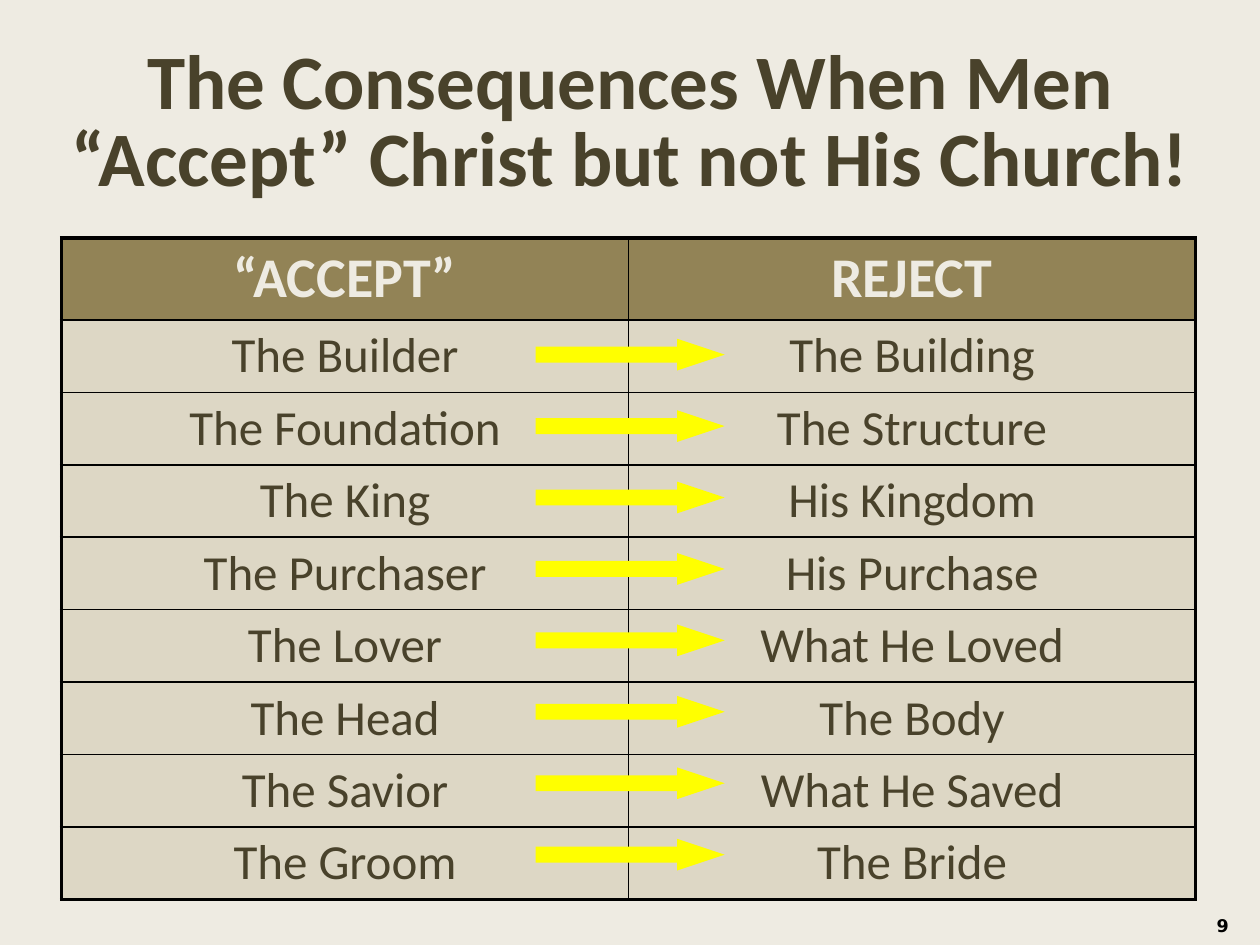
from dataclasses import dataclass

from lxml.etree import SubElement
from pptx import Presentation
from pptx.dml.color import RGBColor
from pptx.enum.shapes import MSO_SHAPE
from pptx.enum.text import MSO_ANCHOR, PP_ALIGN
from pptx.oxml.ns import qn
from pptx.util import Cm, Pt


@dataclass(frozen=True)
class Theme:
    background: str = "EEEBE2"
    ink: str = "49422B"
    header: str = "928356"
    body: str = "DDD7C5"
    arrow: str = "FFFF00"
    black: str = "000000"
    font: str = "Calibri"
    number_font: str = "DejaVu Sans"
    title_size: int = 44
    header_size: int = 32
    body_size: int = 28
    number_size: int = 10
    outer_line: float = 2.25
    inner_line: float = 1


def rgb(color):
    return RGBColor.from_string(color)


class SlideBuilder:
    def __init__(self, s, theme):
        self.s = s
        self.theme = theme

    def background(self):
        fill = self.s.background.fill
        fill.solid()
        fill.fore_color.rgb = rgb(self.theme.background)

    def run(self, p, text, size, color, bold=False, font=None):
        r = p.add_run()
        r.text = text
        r.font.name = font or self.theme.font
        r.font.size = Pt(size)
        r.font.bold = bold
        r.font.color.rgb = rgb(color)

    def text(self, box, text, size, color, align, font=None):
        tf = self.s.shapes.add_textbox(*map(Cm, box)).text_frame
        tf.word_wrap = True
        p = tf.paragraphs[0]
        p.alignment = align
        self.run(p, text, size, color, True, font)
        return tf

    def title(self, box, text):
        t = self.theme
        tf = self.text(box, text, t.title_size, t.ink, PP_ALIGN.CENTER)
        tf.paragraphs[0].line_spacing = Pt(t.title_size)

    def number(self, box, text):
        t = self.theme
        tf = self.text(box, text, t.number_size, t.black, PP_ALIGN.RIGHT,
                       t.number_font)
        tf.vertical_anchor = MSO_ANCHOR.BOTTOM
        tf.margin_left = tf.margin_right = tf.margin_top = Cm(0.3)
        tf.margin_bottom = Cm(0.25)

    def fill_cell(self, cell, color, outer_sides):
        # Borders come before the fill in the cell properties
        tc_pr = cell._tc.get_or_add_tcPr()
        for side in "LRTB":
            width = (self.theme.outer_line if side in outer_sides
                     else self.theme.inner_line)
            ln = SubElement(tc_pr, qn(f"a:ln{side}"), w=str(Pt(width)))
            solid = SubElement(ln, qn("a:solidFill"))
            SubElement(solid, qn("a:srgbClr"), val=self.theme.black)
        cell.fill.solid()
        cell.fill.fore_color.rgb = rgb(color)

    def table(self, left, top, col_width, header_height, row_height, rows):
        t = self.theme
        n_rows, n_cols = len(rows), len(rows[0])
        height = header_height + row_height * (n_rows - 1)
        box = map(Cm, (left, top, col_width * n_cols, height))
        table = self.s.shapes.add_table(n_rows, n_cols, *box).table
        for col in table.columns:
            col.width = Cm(col_width)
        for i, row in enumerate(rows):
            is_header = i == 0
            table.rows[i].height = Cm(header_height if is_header else row_height)
            for j, text in enumerate(row):
                cell = table.cell(i, j)
                edges = {"L": j == 0, "R": j == n_cols - 1,
                         "T": is_header, "B": i == n_rows - 1}
                self.fill_cell(cell, t.header if is_header else t.body,
                               [side for side, outer in edges.items() if outer])
                p = cell.text_frame.paragraphs[0]
                p.alignment = PP_ALIGN.CENTER
                self.run(p, text,
                         t.header_size if is_header else t.body_size,
                         t.background if is_header else t.ink, is_header)

    def arrow(self, box):
        sp = self.s.shapes.add_shape(MSO_SHAPE.RIGHT_ARROW, *map(Cm, box))
        sp.shadow.inherit = False
        sp.adjustments[0] = 0.5
        sp.adjustments[1] = 1.5
        sp.fill.solid()
        sp.fill.fore_color.rgb = rgb(self.theme.arrow)
        sp.line.fill.background()


ROWS = [
    ("“ACCEPT”", "REJECT"),
    ("The Builder", "The Building"),
    ("The Foundation", "The Structure"),
    ("The King", "His Kingdom"),
    ("The Purchaser", "His Purchase"),
    ("The Lover", "What He Loved"),
    ("The Head", "The Body"),
    ("The Savior", "What He Saved"),
    ("The Groom", "The Bride"),
]


def main():
    prs = Presentation()
    prs.slide_width, prs.slide_height = Cm(25.4), Cm(19.05)
    slide = SlideBuilder(prs.slides.add_slide(prs.slide_layouts[6]), Theme())
    slide.background()

    # Slide number
    slide.number((22.61, 17.78, 2.46, 1.27), "9")

    # Table of pairs
    slide.table(1.24, 4.8, 11.43, 1.65, 1.46, ROWS)

    # Title
    slide.title((0.33, 0.84, 24.77, 3.89),
                "The Consequences When Men “Accept” Christ but not His Church!")

    # One arrow for each pair
    for i in range(len(ROWS) - 1):
        slide.arrow((10.8, 6.83 + 1.44 * i, 3.81, 0.64))

    prs.save("out.pptx")


if __name__ == "__main__":
    main()
